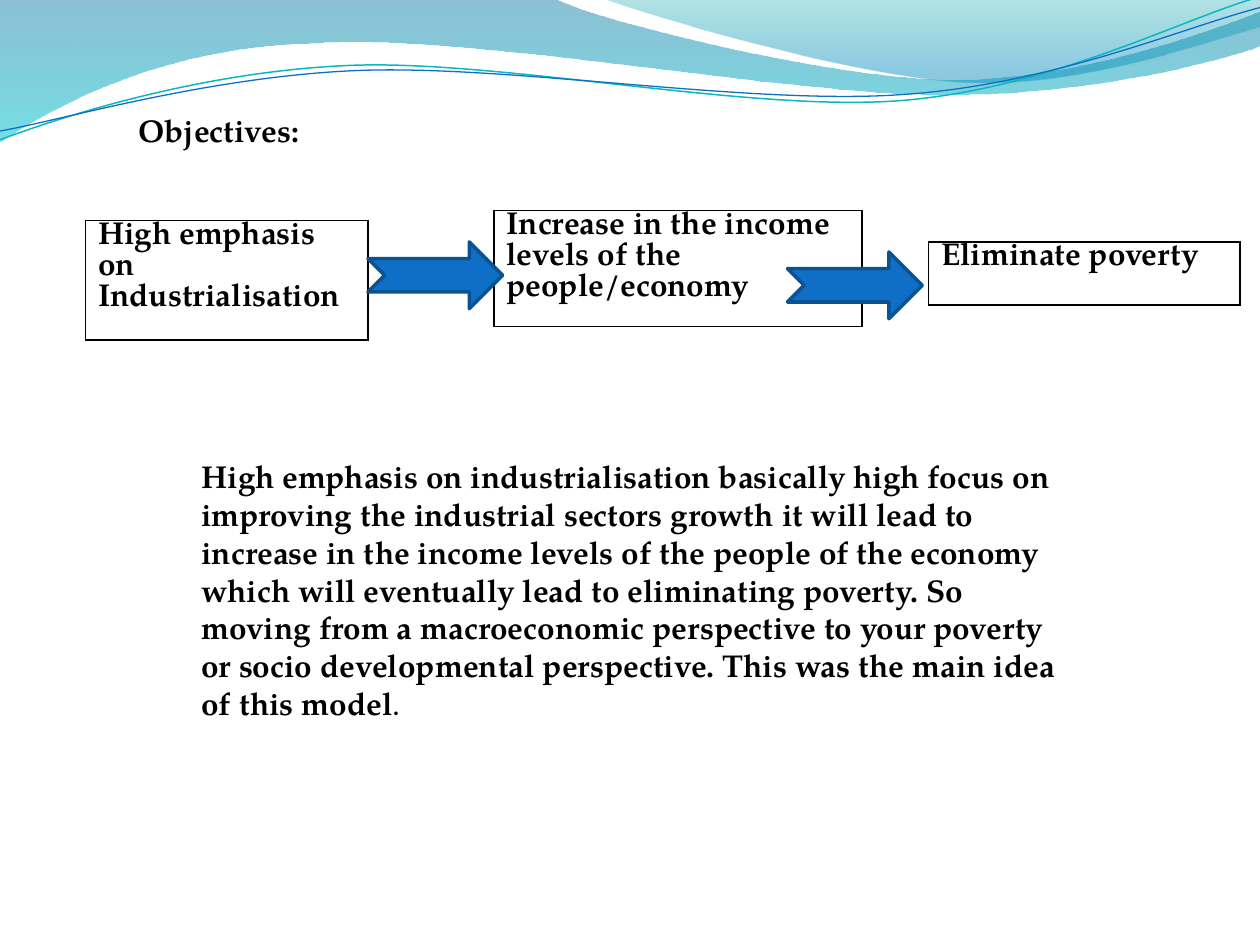
from math import cos, radians, sin

from lxml import etree
from pptx import Presentation
from pptx.dml.color import RGBColor
from pptx.enum.shapes import MSO_SHAPE
from pptx.enum.text import MSO_AUTO_SIZE
from pptx.oxml.ns import qn
from pptx.util import Inches, Pt

ARROW = MSO_SHAPE.NOTCHED_RIGHT_ARROW
GROW = MSO_AUTO_SIZE.SHAPE_TO_FIT_TEXT

FONT = "TeX Gyre Pagella"
BLACK = RGBColor(0x00, 0x00, 0x00)
BLUE = RGBColor(0x0F, 0x6F, 0xC6)
DARK_BLUE = RGBColor(0x0B, 0x52, 0x92)
TEAL = RGBColor(0x0A, 0xB8, 0xBF)
WAVE_BLUE = RGBColor(0x00, 0x74, 0xA1)
WAVE_TEAL = RGBColor(0x00, 0xC6, 0xCF)
CREST_TEAL = RGBColor(0x00, 0xA1, 0xA9)
CREST_BLUE = RGBColor(0x00, 0x8B, 0xBF)

LINE_TURN = 357.3

# A two-number step is a straight line, a six-number step a Bezier curve
WAVE = [(0, 0), (4.4, -0.01), (4.76, 0.17, 6.64, 0.63, 7.58, 0.63),
        (8.53, 0.63, 9.58, 0.26, 10, 0.09), (10.01, 0.36),
        (9.83, 0.44, 8.7, 0.76, 7.46, 0.75),
        (6.22, 0.75, 3.82, 0.28, 2.57, 0.34),
        (1.29, 0.36, 0.46, 0.83, -0.01, 1.13), (0, 0)]
CREST = [(4.79, -0.01), (5.09, 0.11, 6.82, 0.62, 7.69, 0.65),
         (8.56, 0.69, 9.61, 0.32, 10, 0.21), (10, 0), (4.79, -0.01)]
TEAL_LINE = [(0, 1.11), (0.48, 0.93, 1.58, 0.57, 2.77, 0.52),
             (3.95, 0.47, 5.93, 0.89, 7.13, 0.8),
             (8.33, 0.71, 9.38, 0.15, 9.98, -0.02)]
BLUE_LINE = [(0, 1.04), (0.47, 0.96, 1.64, 0.61, 2.83, 0.56),
             (4.03, 0.51, 5.97, 0.84, 7.17, 0.75),
             (8.36, 0.67, 9.41, 0.21, 10, 0.06)]

STAGES = [("High emphasis on Industrialisation", (0.68, 1.75, 2.24, 1), 0.95),
          ("Increase in the income levels of the people/economy",
           (3.92, 1.67, 2.92, 1), 0.92),
          ("Eliminate poverty", (7.37, 1.92, 2.47, 0.5), 0.5)]
ARROWS = [(2.92, 1.92, 1.07, 0.53), (6.25, 2, 1.07, 0.53)]
SUMMARY = (
    "High emphasis on industrialisation basically high focus on improving the "
    "industrial sectors growth it will lead to increase in the income levels "
    "of the people of the economy which will eventually lead to eliminating "
    "poverty. So moving from a macroeconomic perspective to your poverty or "
    "socio developmental perspective. This was the main idea of this model")


def to_inches(box):
    return [Inches(length) for length in box]


def style_span(span, bold=True):
    span.font.name = FONT
    span.font.size = Pt(18)
    span.font.bold = bold
    span.font.color.rgb = BLACK


def add_outline(page, steps, box, close, turn=0):
    """Curved outline in a box; the box is turned about its centre."""
    left, top, width, height = box
    cosine, sine = cos(radians(-turn)), sin(radians(-turn))

    def place(x, y):
        x, y = x - left - width / 2, y - top - height / 2
        return (Inches(width / 2 + x * cosine - y * sine),
                Inches(height / 2 + x * sine + y * cosine))

    builder = page.shapes.build_freeform(*to_inches(steps[0]))
    builder.add_line_segments([to_inches(step[-2:]) for step in steps[1:]], close=close)
    shape = builder.convert_to_shape()
    shape.shadow.inherit = False
    shape.left, shape.top, shape.width, shape.height = to_inches(box)
    shape.rotation = turn

    # Swap the straight segments for curves measured within the box
    outline = next(shape._element.iter(qn("a:path")))
    outline.set("w", str(shape.width))
    outline.set("h", str(shape.height))
    for segment, step in zip(list(outline), steps):
        curved = len(step) == 6
        tag = "a:cubicBezTo" if curved else segment.tag
        node = etree.Element(qn(tag) if curved else tag)
        for x, y in zip(step[::2], step[1::2]):
            across, down = place(x, y)
            etree.SubElement(node, qn("a:pt"), x=str(across), y=str(down))
        outline.replace(segment, node)
    return shape


def add_wave(page, steps, box, stops):
    """Closed wave with a see-through gradient running downwards."""
    wave = add_outline(page, steps, box, True)
    wave.line.fill.background()
    wave.fill.gradient()
    wave.fill.gradient_angle = 270
    for stop, (position, color, _) in zip(wave.fill.gradient_stops, stops):
        stop.position = position
        stop.color.rgb = color
    for node, (_, _, opacity) in zip(wave._element.spPr.iter(qn("a:srgbClr")), stops):
        etree.SubElement(node, qn("a:alpha"), val=str(opacity * 1000))


def add_curve(page, steps, box, color, width):
    curve = add_outline(page, steps, box, False, LINE_TURN)
    curve.fill.background()
    curve.line.color.rgb = color
    curve.line.width = Pt(width)


def add_header_waves(page):
    add_wave(page, WAVE, (-0.01, -0.01, 10.02, 1.14),
             [(0, WAVE_BLUE, 45), (1, WAVE_TEAL, 55)])
    add_wave(page, CREST, (4.79, -0.01, 5.21, 0.7),
             [(0, CREST_TEAL, 30), (0.8, CREST_BLUE, 45)])
    add_curve(page, TEAL_LINE, (-0.02, 0.22, 10.02, 0.71), TEAL, 0.85)
    add_curve(page, BLUE_LINE, (-0.02, 0.3, 10.03, 0.58), BLUE, 0.75)


def add_borders(cell):
    properties = cell._tc.get_or_add_tcPr()
    for index, side in enumerate(("lnL", "lnR", "lnT", "lnB")):
        border = etree.Element(qn(f"a:{side}"), w=str(Pt(1)))
        fill = etree.SubElement(border, qn("a:solidFill"))
        etree.SubElement(fill, qn("a:srgbClr"), val=str(BLACK))
        properties.insert(index, border)


def add_stage(page, text, box, row_height):
    """One-cell table holding a stage of the model."""
    frame = page.shapes.add_table(1, 1, *to_inches(box))
    table = frame.table
    table.first_row = table.horz_banding = False
    table.rows[0].height = Inches(row_height)
    frame.height = Inches(box[3])
    cell = table.cell(0, 0)
    cell.fill.background()
    add_borders(cell)
    cell.margin_top = cell.margin_bottom = Inches(0.01)
    cell.text_frame.text = text
    style_span(cell.text_frame.paragraphs[0].runs[0])


def add_arrow(page, box):
    arrow = page.shapes.add_shape(ARROW, *to_inches(box))
    arrow.shadow.inherit = False
    arrow.fill.solid()
    arrow.fill.fore_color.rgb = BLUE
    arrow.line.color.rgb = DARK_BLUE
    arrow.line.width = Pt(2)


def add_text(page, text, box, wrap):
    frame = page.shapes.add_textbox(*to_inches(box)).text_frame
    frame.word_wrap = wrap
    frame.auto_size = GROW
    frame.text = text
    para = frame.paragraphs[0]
    style_span(para.runs[0])
    return para


def main():
    deck = Presentation()
    deck.slide_width, deck.slide_height = Inches(10), Inches(7.5)
    page = deck.slides.add_slide(deck.slide_layouts[6])

    add_header_waves(page)

    # Flow from industry to less poverty
    for text, box, row_height in STAGES:
        add_stage(page, text, box, row_height)
    for box in ARROWS:
        add_arrow(page, box)

    # Heading and summary
    add_text(page, "Objectives:", (1, 0.83, 1.53, 0.4), False)
    summary = add_text(page, SUMMARY, (1.5, 3.58, 7.08, 2.22), True)
    full_stop = summary.add_run()
    full_stop.text = "."
    style_span(full_stop, bold=False)

    deck.save("out.pptx")


if __name__ == "__main__":
    main()
